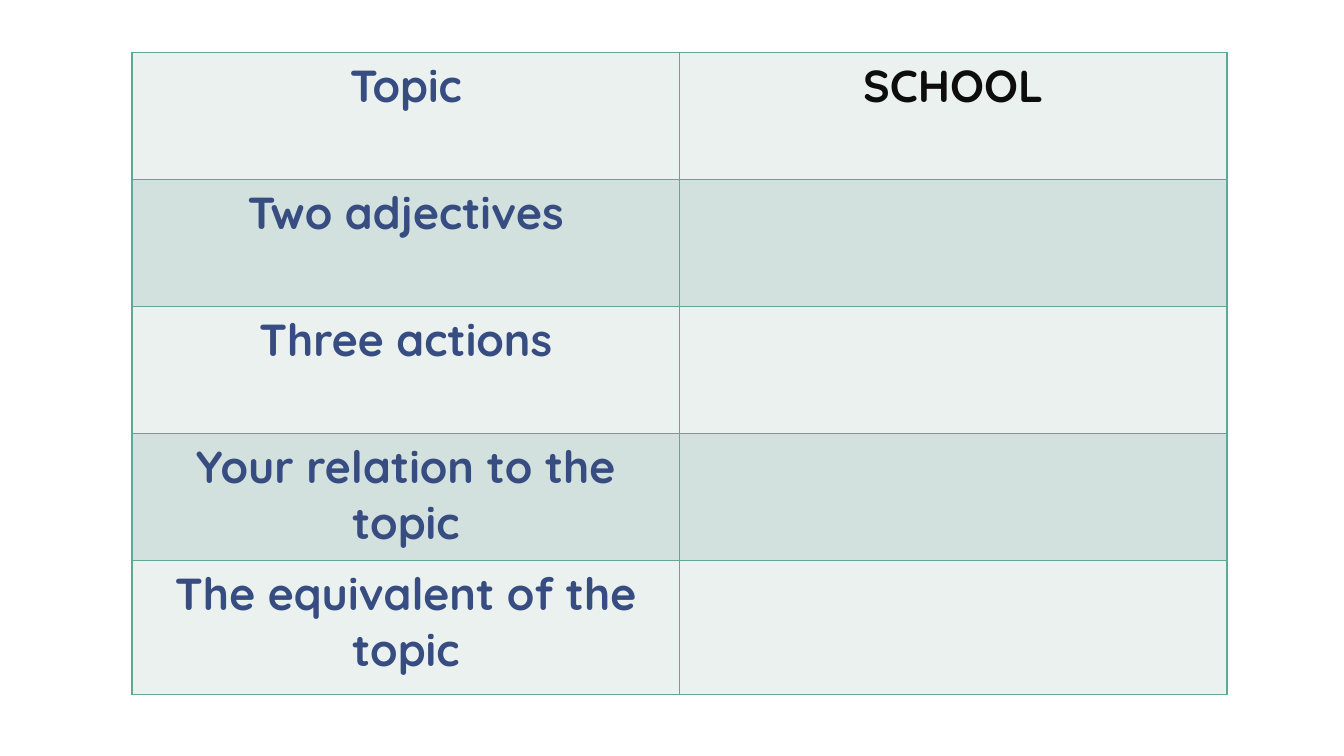
from lxml import etree
from pptx import Presentation
from pptx import util as u
from pptx.dml import color
from pptx.enum import text
from pptx.oxml import ns

ROWS = [
    ("Topic", "SCHOOL"),
    ("Two adjectives", ""),
    ("Three actions", ""),
    ("Your relation to the topic", ""),
    ("The equivalent of the topic", ""),
]
ROW_HEIGHTS = [1.26] * 4 + [1.33]


def rgb(value):
    return color.RGBColor.from_string(value)


def write(tf, content, font, size, fill, bold=False, align=text.PP_ALIGN.CENTER):
    tf.word_wrap = True
    p = tf.paragraphs[0]
    p.alignment = align
    r = p.add_run()
    r.text = content
    r.font.name = font
    r.font.size = u.Pt(size)
    r.font.bold = bold
    r.font.color.rgb = rgb(fill)


class SlideBuilder:
    font = "Quicksand"
    size = 32
    label = "374C81"
    answer = "0D0D0D"
    border = "61A796"
    bands = ("EAF1EF", "D2E1DD")

    def __init__(self, prs):
        self.s = prs.slides.add_slide(prs.slide_layouts[6])
        self.s.background.fill.solid()
        self.s.background.fill.fore_color.rgb = rgb("FFFFFF")

    def cell_borders(self, cell):
        tc_pr = cell._tc.get_or_add_tcPr()
        for side in ("a:lnL", "a:lnR", "a:lnT", "a:lnB"):
            ln = etree.SubElement(tc_pr, ns.qn(side), w=str(u.Pt(1)))
            fill = etree.SubElement(ln, ns.qn("a:solidFill"))
            etree.SubElement(fill, ns.qn("a:srgbClr"), val=self.border)

    def table(self, rows, heights, left, top, col_width):
        cols = len(rows[0])
        frame = self.s.shapes.add_table(
            len(rows), cols, u.Inches(left), u.Inches(top),
            u.Inches(col_width * cols), u.Inches(sum(heights)))
        table = frame.table
        table.first_row = False
        table.horz_banding = False
        for column in table.columns:
            column.width = u.Inches(col_width)
        for i, (row, height) in enumerate(zip(rows, heights)):
            table.rows[i].height = u.Inches(height)
            for j, content in enumerate(row):
                cell = table.cell(i, j)
                self.cell_borders(cell)
                cell.fill.solid()
                cell.fill.fore_color.rgb = rgb(self.bands[i % 2])
                if content:
                    write(cell.text_frame, content, self.font, self.size,
                          self.answer if j else self.label, bold=True)


def main():
    prs = Presentation()
    prs.slide_width = u.Inches(13.33)
    prs.slide_height = u.Inches(7.5)
    SlideBuilder(prs).table(ROWS, ROW_HEIGHTS, 1.31, 0.52, 5.43)
    prs.save("out.pptx")


if __name__ == "__main__":
    main()
